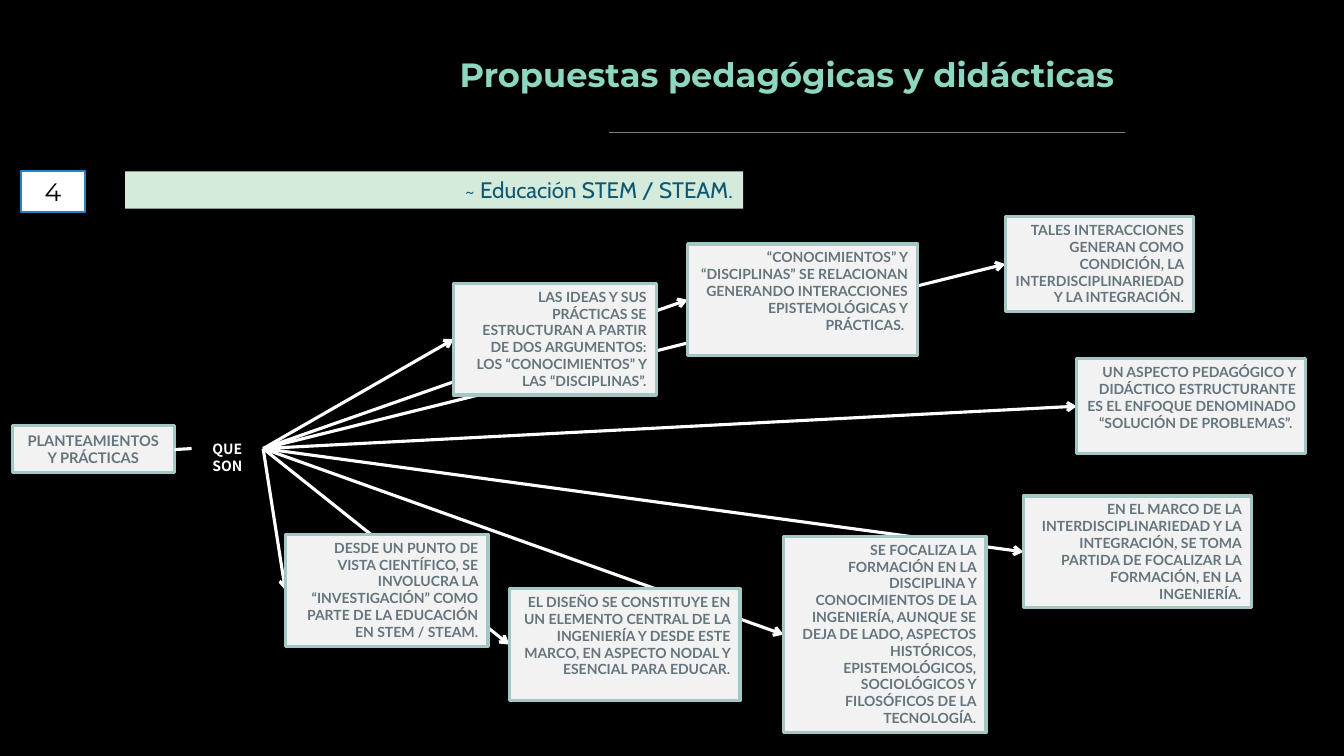
from dataclasses import dataclass
from typing import Optional

from lxml.etree import SubElement
from pptx import Presentation
from pptx.dml.color import RGBColor
from pptx.enum.shapes import MSO_CONNECTOR, MSO_SHAPE
from pptx.enum.text import MSO_ANCHOR, MSO_AUTO_SIZE, PP_ALIGN
from pptx.oxml.ns import qn
from pptx.shapes.base import BaseShape
from pptx.slide import Slide
from pptx.util import Inches, Pt


@dataclass(frozen=True)
class TextStyle:
    font: str
    size: float
    color: str
    bold: bool = False
    align: PP_ALIGN = PP_ALIGN.RIGHT
    anchor: MSO_ANCHOR = MSO_ANCHOR.MIDDLE
    spacing: Optional[float] = None


@dataclass(frozen=True)
class Theme:
    background: str = "000000"
    rule: str = "7F7F7F"
    arrow: str = "FFFFFF"
    arrow_width: float = 2.25
    band: str = "D4EBDB"
    number_fill: str = "FFFFFF"
    number_line: str = "2683C6"
    card_fill: str = "F2F2F2"
    card_line: str = "A1C8C5"
    title: TextStyle = TextStyle("Montserrat", 24, "8DD6C1", bold=True)
    subtitle: TextStyle = TextStyle("Cabin", 16, "0E5772")
    number: TextStyle = TextStyle("Montserrat", 18, "000000", align=PP_ALIGN.CENTER)
    root: TextStyle = TextStyle("Lato", 10.5, "65757D", True, PP_ALIGN.CENTER)
    link: TextStyle = TextStyle("Noto Sans CJK SC", 10, "FFFFFF", True,
                                PP_ALIGN.CENTER, MSO_ANCHOR.TOP, 12)
    card: TextStyle = TextStyle("Lato", 10, "65757D", True, anchor=MSO_ANCHOR.TOP)


@dataclass(frozen=True)
class Frame:
    left: float
    top: float
    width: float
    height: float

    def lengths(self) -> tuple:
        return tuple(Inches(v) for v in (self.left, self.top, self.width, self.height))


@dataclass(frozen=True)
class Card:
    frame: Frame
    text: str


THEME = Theme()
HUB = (2.61, 4.45)

CARDS = [
    Card(Frame(4.5, 2.81, 2.01, 1.11),
         "LAS IDEAS Y SUS PRÁCTICAS SE ESTRUCTURAN A PARTIR DE DOS ARGUMENTOS: "
         "LOS “CONOCIMIENTOS” Y LAS “DISCIPLINAS”."),
    Card(Frame(6.82, 2.42, 2.28, 1.11),
         "“CONOCIMIENTOS” Y “DISCIPLINAS” SE RELACIONAN GENERANDO INTERACCIONES "
         "EPISTEMOLÓGICAS Y PRÁCTICAS. "),
    Card(Frame(9.97, 2.15, 1.87, 0.94),
         "TALES INTERACCIONES GENERAN COMO CONDICIÓN, LA INTERDISCIPLINARIEDAD "
         "Y LA INTEGRACIÓN."),
    Card(Frame(10.68, 3.56, 2.27, 0.94),
         "UN ASPECTO PEDAGÓGICO Y DIDÁCTICO ESTRUCTURANTE ES EL ENFOQUE DENOMINADO "
         "“SOLUCIÓN DE PROBLEMAS”. "),
    Card(Frame(10.15, 4.92, 2.26, 1.11),
         "EN EL MARCO DE LA INTERDISCIPLINARIEDAD Y LA INTEGRACIÓN, SE TOMA PARTIDA "
         "DE FOCALIZAR LA FORMACIÓN, EN LA INGENIERÍA."),
    Card(Frame(7.77, 5.32, 2.01, 1.95),
         "SE FOCALIZA LA FORMACIÓN EN LA DISCIPLINA Y CONOCIMIENTOS DE LA INGENIERÍA, "
         "AUNQUE SE DEJA DE LADO, ASPECTOS HISTÓRICOS, EPISTEMOLÓGICOS, SOCIOLÓGICOS "
         "Y FILOSÓFICOS DE LA TECNOLOGÍA."),
    Card(Frame(5.05, 5.84, 2.29, 1.11),
         "EL DISEÑO SE CONSTITUYE EN UN ELEMENTO CENTRAL DE LA INGENIERÍA Y DESDE ESTE "
         "MARCO, EN ASPECTO NODAL Y ESENCIAL PARA EDUCAR."),
    Card(Frame(2.83, 5.3, 2.01, 1.11),
         "DESDE UN PUNTO DE VISTA CIENTÍFICO, SE INVOLUCRA LA “INVESTIGACIÓN” COMO "
         "PARTE DE LA EDUCACIÓN EN STEM / STEAM."),
]


def write(box: BaseShape, text: str, style: TextStyle) -> None:
    frame = box.text_frame
    frame.word_wrap = True
    frame.auto_size = MSO_AUTO_SIZE.NONE
    frame.vertical_anchor = style.anchor
    para = frame.paragraphs[0]
    para.alignment = style.align
    if style.spacing:
        para.line_spacing = Pt(style.spacing)
    span = para.add_run()
    span.text = text
    span.font.name = style.font
    span.font.size = Pt(style.size)
    span.font.bold = style.bold
    span.font.color.rgb = RGBColor.from_string(style.color)


def add_box(page: Slide, frame: Frame, text: str, style: TextStyle, fill: str,
            line: Optional[str] = None, line_width: float = 2.25) -> None:
    box = page.shapes.add_shape(MSO_SHAPE.RECTANGLE, *frame.lengths())
    box.shadow.inherit = False
    box.fill.solid()
    box.fill.fore_color.rgb = RGBColor.from_string(fill)
    if line:
        box.line.color.rgb = RGBColor.from_string(line)
        box.line.width = Pt(line_width)
    else:
        box.line.fill.background()
    write(box, text, style)


def add_line(page: Slide, start: tuple, end: tuple, color: str, width: float,
             arrow: bool = False) -> None:
    points = [Inches(value) for value in (*start, *end)]
    line = page.shapes.add_connector(MSO_CONNECTOR.STRAIGHT, *points)
    line.line.color.rgb = RGBColor.from_string(color)
    line.line.width = Pt(width)
    if arrow:
        SubElement(line.line._get_or_add_ln(), qn("a:tailEnd"), type="arrow")
    SubElement(line._element.spPr, qn("a:effectLst"))


def main() -> None:
    deck = Presentation()
    deck.slide_width, deck.slide_height = Inches(13.33), Inches(7.5)
    page = deck.slides.add_slide(deck.slide_layouts[5])
    page.background.fill.solid()
    page.background.fill.fore_color.rgb = RGBColor.from_string(THEME.background)

    # Heading
    title = page.shapes.title
    title.left, title.top, title.width, title.height = Frame(2.12, 0.48, 9.03, 0.5).lengths()
    write(title, "Propuestas pedagógicas y didácticas", THEME.title)
    add_line(page, (11.16, 1.31), (6.04, 1.31), THEME.rule, 0.75)
    add_box(page, Frame(1.24, 1.7, 6.13, 0.37), "~ Educación STEM / STEAM.",
            THEME.subtitle, THEME.band)
    add_box(page, Frame(0.21, 1.7, 0.63, 0.4), "4", THEME.number,
            THEME.number_fill, THEME.number_line, 1.5)

    # Root of the map
    add_box(page, Frame(0.12, 4.22, 1.61, 0.47), "PLANTEAMIENTOS Y PRÁCTICAS",
            THEME.root, THEME.card_fill, THEME.card_line)
    link = page.shapes.add_textbox(*Frame(1.9, 4.32, 0.71, 0.27).lengths())
    write(link, "QUE SON", THEME.link)
    add_line(page, (1.73, 4.46), (1.9, 4.45), THEME.arrow, THEME.arrow_width)

    # Arrows run behind the cards, to the middle of each left side
    for card in CARDS:
        target = (card.frame.left, card.frame.top + card.frame.height / 2)
        add_line(page, HUB, target, THEME.arrow, THEME.arrow_width, arrow=True)
    for card in CARDS:
        add_box(page, card.frame, card.text, THEME.card, THEME.card_fill, THEME.card_line)

    deck.save("out.pptx")


if __name__ == "__main__":
    main()
